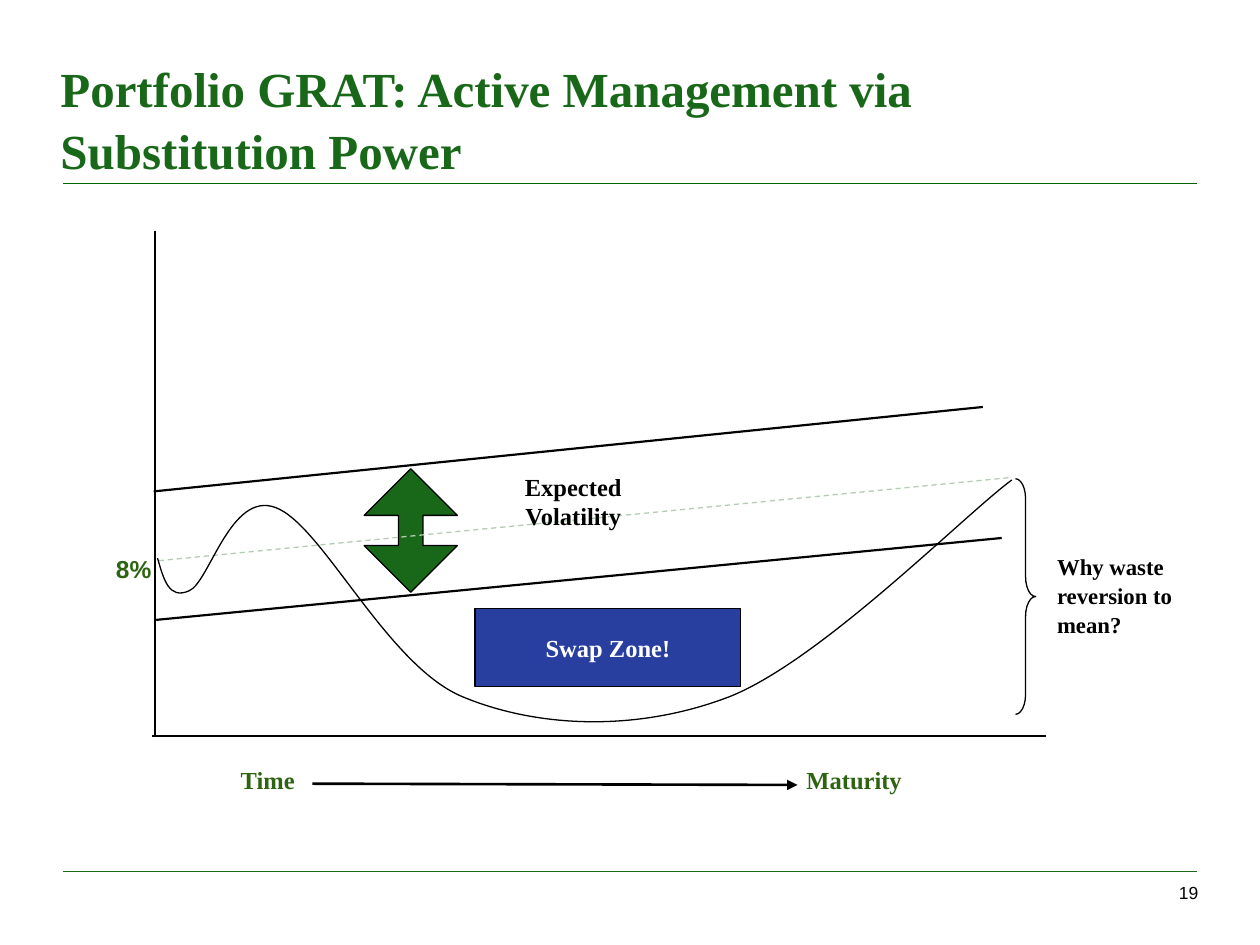
from pptx import Presentation
from pptx.dml.color import RGBColor
from pptx.enum.dml import MSO_LINE
from pptx.enum.shapes import MSO_CONNECTOR, MSO_SHAPE
from pptx.enum.text import MSO_ANCHOR, PP_ALIGN
from pptx.oxml.ns import qn
from pptx.util import Inches, Pt
from lxml import etree

GREEN = RGBColor(0x19, 0x68, 0x19)
RULE_GREEN = RGBColor(0x00, 0x66, 0x00)
LABEL_GREEN = RGBColor(0x2D, 0x64, 0x11)
PALE_GREEN = RGBColor(0xB3, 0xCC, 0xB3)
BLUE = RGBColor(0x28, 0x3F, 0xA0)
BLACK = RGBColor(0x00, 0x00, 0x00)
WHITE = RGBColor(0xFF, 0xFF, 0xFF)
STRAIGHT = MSO_CONNECTOR.STRAIGHT
DASH = MSO_LINE.DASH
UP_DOWN_ARROW, RIGHT_BRACE = MSO_SHAPE.UP_DOWN_ARROW, MSO_SHAPE.RIGHT_BRACE
RECTANGLE = MSO_SHAPE.RECTANGLE
TOP, MIDDLE, BOTTOM = MSO_ANCHOR.TOP, MSO_ANCHOR.MIDDLE, MSO_ANCHOR.BOTTOM
LEFT, CENTER, RIGHT = PP_ALIGN.LEFT, PP_ALIGN.CENTER, PP_ALIGN.RIGHT

prs = Presentation()
prs.slide_width, prs.slide_height = Inches(10), Inches(7.5)
s = prs.slides.add_slide(prs.slide_layouts[5])


def write(sp, text, size=14, color=BLACK, font="Times New Roman", bold=True,
          align=LEFT, anchor=TOP, wrap=True, inset=(0.09, 0.04), spacing=None, tab=None):
    """Put one formatted paragraph into a shape."""
    tf = sp.text_frame
    tf.word_wrap, tf.vertical_anchor = wrap, anchor
    tf.margin_left = tf.margin_right = Inches(inset[0])
    tf.margin_top = tf.margin_bottom = Inches(inset[1])
    p = tf.paragraphs[0]
    p.alignment, p.line_spacing = align, spacing
    if tab:
        tabs = etree.SubElement(p._p.get_or_add_pPr(), qn("a:tabLst"))
        etree.SubElement(tabs, qn("a:tab"), pos=str(Inches(tab)), algn="l")
    r = p.add_run()
    r.text = text
    r.font.name, r.font.size, r.font.bold = font, Pt(size), bold
    r.font.color.rgb = color


def add_line(x1, y1, x2, y2, color=BLACK, width=1.25, dash=None, arrow=False):
    """Draw a straight line without a shadow."""
    line = s.shapes.add_connector(STRAIGHT, Inches(x1), Inches(y1), Inches(x2), Inches(y2))
    line.line.color.rgb, line.line.width = color, Pt(width)
    if dash:
        line.line.dash_style = dash
    if arrow:
        etree.SubElement(line.line._get_or_add_ln(), qn("a:tailEnd"), type="triangle")
    etree.SubElement(line._element.spPr, qn("a:effectLst"))


# Title
title = s.shapes.title
title.left, title.top, title.width, title.height = (
    Inches(v) for v in (0.48, 0.88, 8.52, 0.54))
write(title, "Portfolio GRAT: Active Management via Substitution Power", size=28,
      color=GREEN, anchor=BOTTOM, inset=(0, 0), spacing=1.05)

# Header and footer rules
for y, color in ((1.46, RULE_GREEN), (6.92, GREEN)):
    add_line(0.5, y, 9.5, y, color, 0.5)

# Volatility band and axes
for ends in ((1.22, 3.9, 7.8, 3.23), (1.24, 4.92, 7.95, 4.27),
             (1.23, 1.83, 1.23, 5.84), (1.21, 5.84, 8.3, 5.84)):
    add_line(*ends)

# Volatility arrow, reversion brace and swap zone
shapes = []
for kind, box, fill, adjustments in (
        (UP_DOWN_ARROW, (2.89, 3.72, 0.74, 0.98), GREEN, (0.5, 0.263)),
        (RIGHT_BRACE, (8.06, 3.8, 0.16, 1.87), None, (0.986, 0.5)),
        (RECTANGLE, (3.77, 4.83, 2.11, 0.62), BLUE, ())):
    sp = s.shapes.add_shape(kind, *(Inches(v) for v in box))
    sp.shadow.inherit = False
    for i, value in enumerate(adjustments):
        sp.adjustments[i] = value
    if fill is None:
        sp.fill.background()
    else:
        sp.fill.solid()
        sp.fill.fore_color.rgb = fill
    sp.line.color.rgb, sp.line.width = BLACK, Pt(0.75)
    shapes.append(sp)
swap_zone = shapes[-1]
write(swap_zone, "Swap Zone!", color=WHITE, align=CENTER, anchor=MIDDLE, wrap=False)

# Mean growth line and time arrow
add_line(1.26, 4.45, 8.02, 3.79, PALE_GREEN, 0.75, dash=DASH)
add_line(2.48, 6.22, 6.33, 6.23, width=1.5, arrow=True)

# Labels and page number
for box, text, style in (
        ((8.3, 4.34, 1.4, 0.74), "Why waste reversion to mean?", dict(size=13, spacing=1.05)),
        ((3.8, 3.76, 1.5, 0.44), "Expected Volatility",
         dict(align=CENTER, anchor=MIDDLE, wrap=False)),
        ((1.82, 6.03, 6.51, 0.33), "Time\tMaturity", dict(color=LABEL_GREEN, tab=4.49)),
        ((0.92, 4.4, 0.36, 0.23), "8%", dict(color=LABEL_GREEN, font="Arial", inset=(0, 0))),
        ((8.76, 7, 0.75, 0.28), "19",
         dict(size=10, font="Arial", bold=False, align=RIGHT, inset=(0, 0)))):
    write(s.shapes.add_textbox(*(Inches(v) for v in box)), text, **style)

# Performance curve: start point, then three Bezier points per segment
curve_points = [(1.25, 4.43),
                (1.3, 4.6), (1.34, 4.76), (1.5, 4.69),
                (1.66, 4.63), (1.83, 3.89), (2.19, 4.03),
                (2.56, 4.17), (3.07, 5.28), (3.67, 5.53),
                (4.27, 5.78), (5.06, 5.81), (5.79, 5.53),
                (6.52, 5.24), (7.65, 4.09), (8.03, 3.81)]
points = [(Inches(x), Inches(y)) for x, y in curve_points]
builder = s.shapes.build_freeform(*points[0])
builder.add_line_segments(points[1:], close=False)
curve = builder.convert_to_shape()
curve.shadow.inherit = False
curve.fill.background()
curve.line.color.rgb, curve.line.width = BLACK, Pt(0.75)

# Turn each three straight segments into one cubic segment
segments = list(curve._element.iter(qn("a:lnTo")))
outline = segments[0].getparent()
for i in range(0, len(segments), 3):
    cubic = etree.SubElement(outline, qn("a:cubicBezTo"))
    for segment in segments[i:i + 3]:
        cubic.append(segment[0])
        outline.remove(segment)

prs.save("out.pptx")
